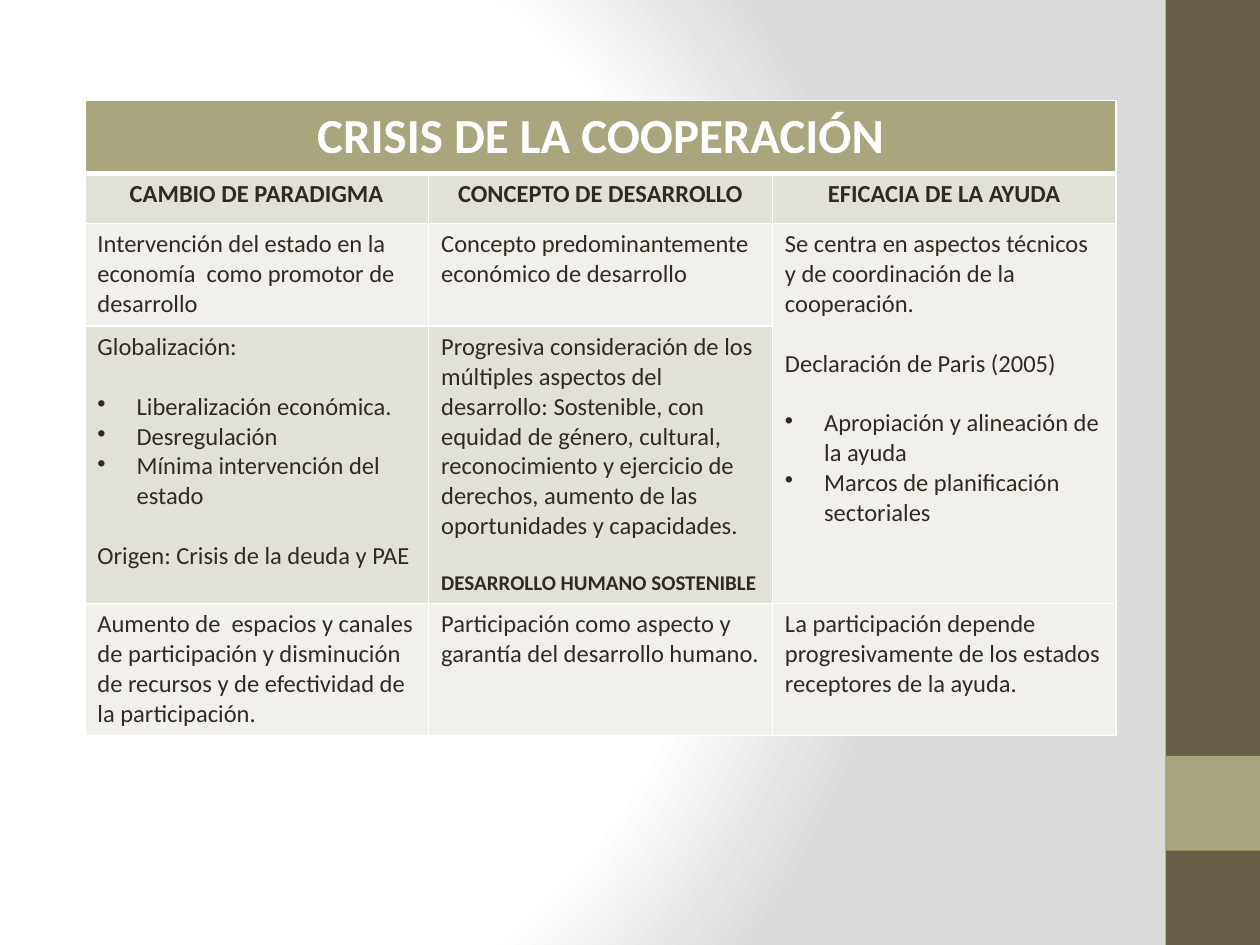
from pptx import Presentation
from pptx.dml.color import RGBColor
from pptx.enum.shapes import MSO_SHAPE
from pptx.enum.text import PP_ALIGN
from pptx.oxml import parse_xml
from pptx.oxml.ns import nsdecls
from pptx.util import Cm, Pt

RECTANGLE = MSO_SHAPE.RECTANGLE
LEFT, CENTER = PP_ALIGN.LEFT, PP_ALIGN.CENTER

COLORS = {
    "white": "FFFFFF", "edge": "DADADA", "brown": "675E47", "olive": "A9A57C",
    "band": "E2E1D7", "pale": "F1F0EC", "text": "2F2B20",
}
FONT = "Calibri"
GAP = 17

TITLE = {"size": 28, "bold": True, "color": "white", "align": CENTER}
HEADING = {"bold": True, "align": CENTER}
BULLET = {"bullet": True}
FIRST_BULLET = {"bullet": True, "before": GAP}
SPACED = {"before": GAP}
CONCLUSION = {"size": 12, "bold": True, "before": GAP}

ROWS = [
    (1.46, "olive", [[("CRISIS DE LA COOPERACIÓN", TITLE)], [], []]),
    (1.01, "band", [
        [("CAMBIO DE PARADIGMA", HEADING)],
        [("CONCEPTO DE DESARROLLO", HEADING)],
        [("EFICACIA DE LA AYUDA", HEADING)],
    ]),
    (2.07, "pale", [
        [("Intervención del estado en la economía  como promotor de desarrollo", {})],
        [("Concepto predominantemente económico de desarrollo", {})],
        [
            ("Se centra en aspectos técnicos y de coordinación de la cooperación.", {}),
            ("Declaración de Paris (2005)", SPACED),
            ("Apropiación y alineación de la ayuda", FIRST_BULLET),
            ("Marcos de planificación sectoriales", BULLET),
        ],
    ]),
    (5.59, "band", [
        [
            ("Globalización:", {}),
            ("Liberalización económica.", FIRST_BULLET),
            ("Desregulación", BULLET),
            ("Mínima intervención del estado", BULLET),
            ("Origen: Crisis de la deuda y PAE", SPACED),
        ],
        [
            ("Progresiva consideración de los múltiples aspectos del desarrollo: "
             "Sostenible, con equidad de género, cultural, reconocimiento y ejercicio "
             "de derechos, aumento de las oportunidades y capacidades.", {}),
            ("DESARROLLO HUMANO SOSTENIBLE", CONCLUSION),
        ],
        [],
    ]),
    (2.66, "pale", [
        [("Aumento de  espacios y canales de participación y disminución de recursos "
          "y de efectividad de la participación.", {})],
        [("Participación como aspecto y garantía del desarrollo humano.", {})],
        [("La participación depende progresivamente de los estados receptores "
          "de la ayuda.", {})],
    ]),
]
MERGES = [((0, 0), (0, 2)), ((2, 2), (3, 2))]
SIDEBAR = [(0, 19.05, "brown"), (15.24, 1.91, "olive")]
TABLE_LEFT, TABLE_TOP, COLUMN_WIDTH = 1.71, 2.03, 6.93


def rgb(name):
    return RGBColor.from_string(COLORS[name])


def write(paragraph, text, size=14, bold=False, color="text", align=LEFT,
          before=0, bullet=False):
    paragraph.alignment = align
    paragraph.space_before = Pt(before)
    run = paragraph.add_run()
    run.text = text
    run.font.name = FONT
    run.font.size = Pt(size)
    run.font.bold = bold
    run.font.color.rgb = rgb(color)
    if bullet:
        properties = paragraph._p.get_or_add_pPr()
        properties.set("marL", str(Cm(0.79)))
        properties.set("indent", str(-Cm(0.79)))
        properties.append(parse_xml(f'<a:buChar {nsdecls("a")} char="•"/>'))


def set_borders(cell, row_index):
    widths = {"L": 1, "R": 1, "T": 3 if row_index == 1 else 1,
              "B": 3 if row_index == 0 else 1}
    properties = cell._tc.get_or_add_tcPr()
    for position, (side, width) in enumerate(widths.items()):
        properties.insert(position, parse_xml(
            f'<a:ln{side} {nsdecls("a")} w="{Pt(width)}"><a:solidFill>'
            f'<a:srgbClr val="{COLORS["white"]}"/></a:solidFill></a:ln{side}>'))


def set_background(slide):
    stops = "".join(
        f'<a:gs pos="{position * 1000}"><a:srgbClr val="{COLORS[name]}"/></a:gs>'
        for position, name in [(0, "white"), (75, "white"), (100, "edge")])
    slide._element.cSld.insert(0, parse_xml(
        f'<p:bg {nsdecls("p", "a")}><p:bgPr><a:gradFill rotWithShape="1">'
        f'<a:gsLst>{stops}</a:gsLst><a:path path="circle">'
        '<a:fillToRect l="20000" t="50000" r="100000" b="50000"/></a:path>'
        '</a:gradFill><a:effectLst/></p:bgPr></p:bg>'))


def add_sidebar(slide):
    for top, height, color in SIDEBAR:
        shape = slide.shapes.add_shape(
            RECTANGLE, Cm(23.5), Cm(top), Cm(1.9), Cm(height))
        shape.shadow.inherit = False
        shape.fill.solid()
        shape.fill.fore_color.rgb = rgb(color)
        shape.line.fill.background()


def add_crisis_table(slide):
    column_count = len(ROWS[0][2])
    table = slide.shapes.add_table(
        len(ROWS), column_count, Cm(TABLE_LEFT), Cm(TABLE_TOP),
        Cm(COLUMN_WIDTH * column_count), Cm(sum(row[0] for row in ROWS))).table
    for column in table.columns:
        column.width = Cm(COLUMN_WIDTH)
    for row_index, (height, color, cells) in enumerate(ROWS):
        table.rows[row_index].height = Cm(height)
        for column_index, content in enumerate(cells):
            cell = table.cell(row_index, column_index)
            cell.fill.solid()
            cell.fill.fore_color.rgb = rgb(color)
            set_borders(cell, row_index)
            frame = cell.text_frame
            for index, (text, style) in enumerate(content):
                paragraph = frame.add_paragraph() if index else frame.paragraphs[0]
                write(paragraph, text, **style)
    for start, end in MERGES:
        table.cell(*start).merge(table.cell(*end))


def main():
    presentation = Presentation()
    presentation.slide_width = Cm(25.4)
    presentation.slide_height = Cm(19.05)
    slide = presentation.slides.add_slide(presentation.slide_layouts[6])
    set_background(slide)
    add_sidebar(slide)
    add_crisis_table(slide)
    presentation.save("out.pptx")


if __name__ == "__main__":
    main()
